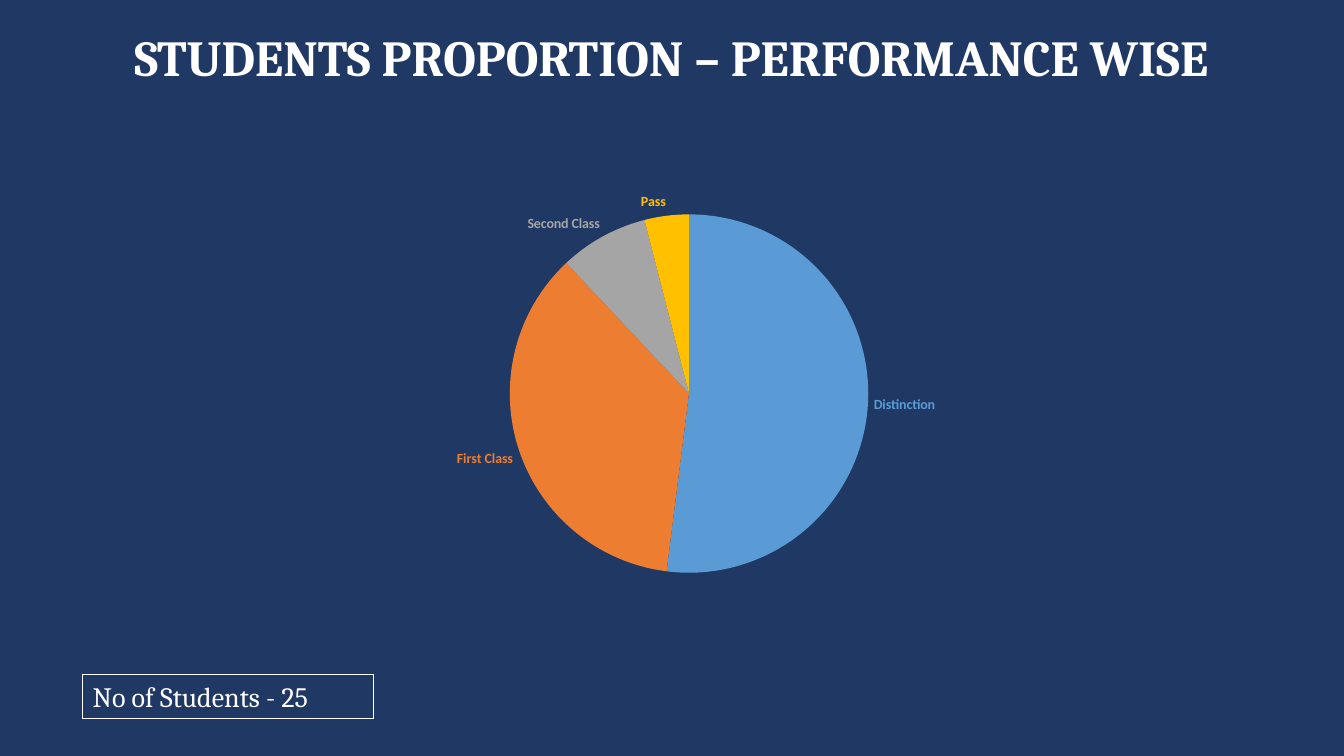
"""Build a slide with a pie chart of students by performance class."""
from dataclasses import dataclass

from lxml.etree import SubElement
from pptx import Presentation
from pptx.chart.chart import Chart
from pptx.chart.data import CategoryChartData
from pptx.dml.color import RGBColor
from pptx.dml.fill import FillFormat
from pptx.enum.chart import XL_CHART_TYPE as ChartType, XL_LABEL_POSITION as LabelPosition
from pptx.enum.shapes import MSO_SHAPE as ShapeKind
from pptx.enum.text import MSO_ANCHOR as Anchor, PP_ALIGN as Align
from pptx.oxml.ns import qn
from pptx.slide import Slide
from pptx.text.text import Font, TextFrame
from pptx.util import Inches, Pt

NAVY = "203864"
WHITE = "FFFFFF"
PLOT_LAYOUT = {
    "layoutTarget": "inner", "xMode": "edge", "yMode": "edge",
    "x": "0.107", "y": "0.132", "w": "0.814", "h": "0.773",
}


@dataclass
class Performance:
    """A performance class with its share of students."""
    name: str
    percent: int
    color: str


PERFORMANCES = [
    Performance("Distinction", 52, "5B9BD5"),
    Performance("First Class", 36, "ED7D31"),
    Performance("Second Class", 8, "A5A5A5"),
    Performance("Pass", 4, "FFC000"),
]


def paint(fill: FillFormat, color: str) -> None:
    """Fill with a solid colour."""
    fill.solid()
    fill.fore_color.rgb = RGBColor.from_string(color)


def style_font(font: Font, name: str, size: float, color: str, bold: bool = False) -> None:
    """Set the typeface, size, colour and weight."""
    font.name, font.size, font.bold = name, Pt(size), bold
    paint(font.fill, color)


def write_text(frame: TextFrame, text: str, size: float, align: Align, bold: bool = False) -> None:
    """Write one white paragraph, centred vertically."""
    frame.text = text
    frame.word_wrap = True
    frame.vertical_anchor = Anchor.MIDDLE
    paragraph = frame.paragraphs[0]
    paragraph.alignment = align
    style_font(paragraph.runs[0].font, "Cambria", size, WHITE, bold)


def add_title(slide: Slide) -> None:
    """Place and write the slide title."""
    title = slide.shapes.title
    title.left, title.top = Inches(0.23), Inches(0.2)
    title.width, title.height = Inches(12.86), Inches(0.71)
    write_text(title.text_frame, "STUDENTS PROPORTION – PERFORMANCE WISE", 36, Align.CENTER, True)
    title.text_frame.paragraphs[0].line_spacing = 1.0


def add_student_count(slide: Slide) -> None:
    """Add the outlined box with the number of students."""
    box = slide.shapes.add_shape(
        ShapeKind.RECTANGLE, Inches(0.82), Inches(6.69), Inches(2.88), Inches(0.44))
    box.shadow.inherit = False
    box.fill.background()
    paint(box.line.fill, WHITE)
    box.line.width = Pt(0.75)
    write_text(box.text_frame, "No of Students - 25", 20, Align.LEFT)


def set_plot_layout(chart: Chart) -> None:
    """Fix the position of the pie inside the chart."""
    plot_area = chart.element.find(".//" + qn("c:plotArea"))
    for layout in plot_area.findall(qn("c:layout")):
        plot_area.remove(layout)
    layout = SubElement(plot_area, qn("c:layout"))
    plot_area.insert(0, layout)
    manual = SubElement(layout, qn("c:manualLayout"))
    for name, value in PLOT_LAYOUT.items():
        SubElement(manual, qn(f"c:{name}")).set("val", value)


def add_performance_pie(slide: Slide) -> None:
    """Add the pie with a coloured name beside each slice."""
    data = CategoryChartData()
    data.categories = [performance.name for performance in PERFORMANCES]
    data.add_series("Series 1", [performance.percent for performance in PERFORMANCES])
    chart = slide.shapes.add_chart(
        ChartType.PIE, Inches(2.26), Inches(1.52), Inches(8.9), Inches(4.6), data).chart
    chart.has_title = chart.has_legend = False
    style_font(chart.font, "Calibri", 10, "000000")
    chart.plots[0].vary_by_categories = True
    series = chart.plots[0].series[0]
    labels = series.data_labels
    labels.show_value, labels.show_category_name = False, True
    labels.position = LabelPosition.OUTSIDE_END
    for index, performance in enumerate(PERFORMANCES):
        point = series.points[index]
        paint(point.format.fill, performance.color)
        point.format.line.fill.background()
        style_font(point.data_label.font, "Calibri", 10, performance.color, True)
        point.data_label.position = LabelPosition.OUTSIDE_END
    for label in chart.element.iter(qn("c:dLbl")):
        label.find(qn("c:showVal")).set("val", "0")
        label.find(qn("c:showCatName")).set("val", "1")
    set_plot_layout(chart)


def main() -> None:
    """Build and save the presentation."""
    presentation = Presentation()
    presentation.slide_width, presentation.slide_height = Inches(13.33), Inches(7.5)
    slide = presentation.slides.add_slide(presentation.slide_layouts[5])
    paint(slide.background.fill, NAVY)
    add_title(slide)
    add_student_count(slide)
    add_performance_pie(slide)
    presentation.save("out.pptx")


if __name__ == "__main__":
    main()
